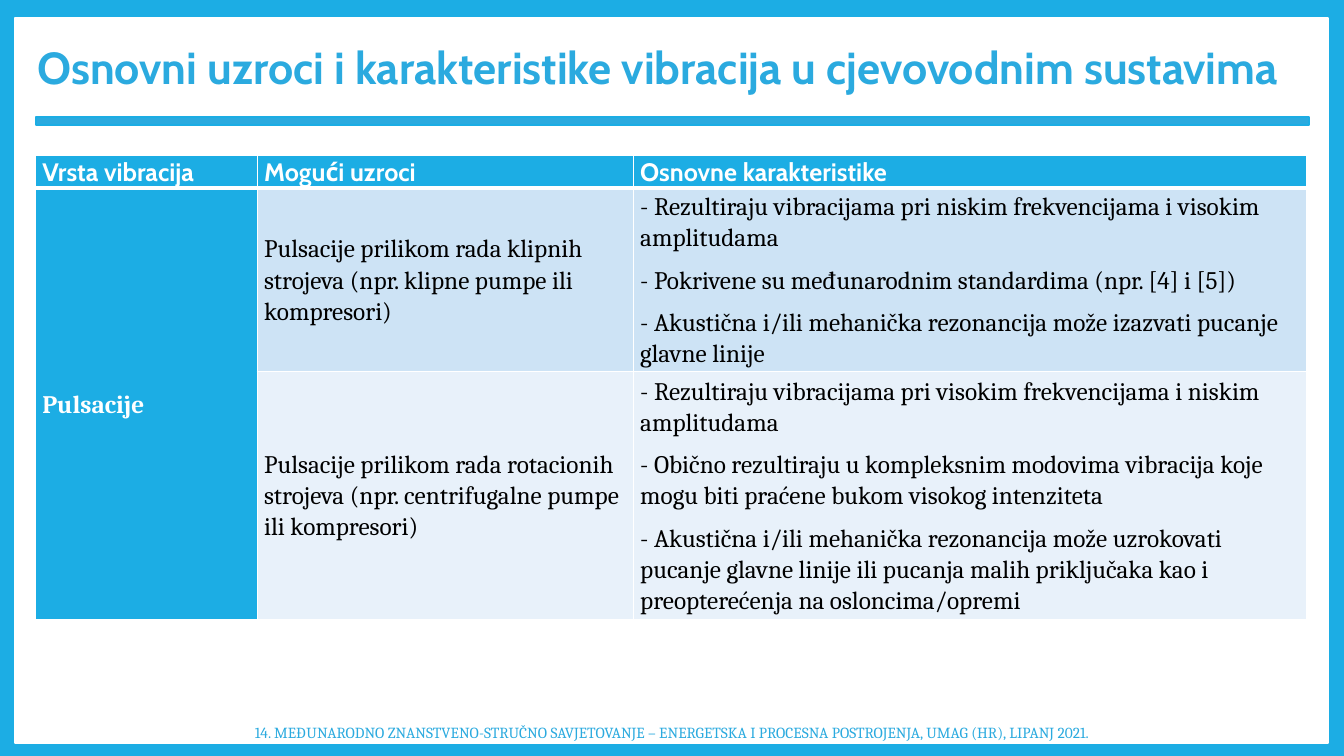
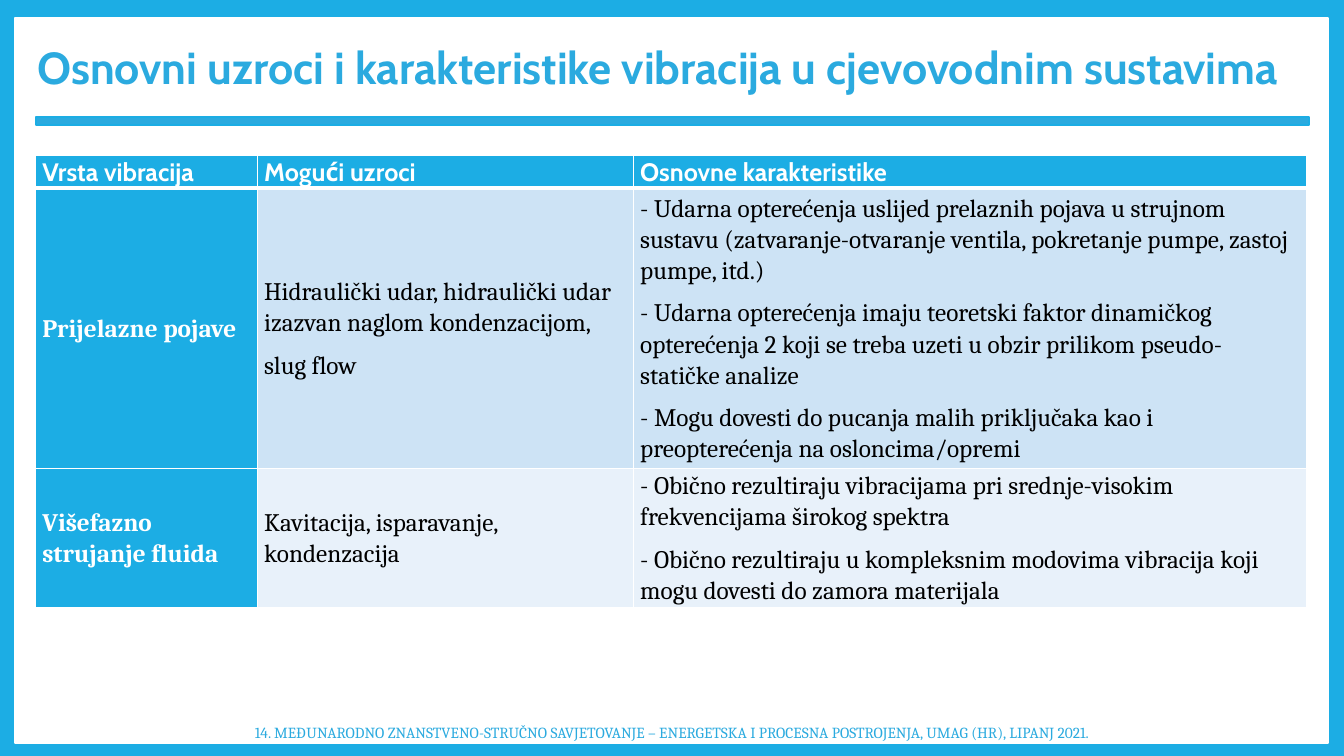
from dataclasses import dataclass

from lxml.etree import SubElement
from pptx import Presentation
from pptx.dml.color import RGBColor
from pptx.enum.shapes import MSO_SHAPE
from pptx.enum.text import MSO_ANCHOR, PP_ALIGN
from pptx.oxml.ns import qn
from pptx.presentation import Presentation as Deck
from pptx.slide import Slide
from pptx.table import _Cell as Cell
from pptx.text.text import TextFrame
from pptx.util import Inches, Pt

HEX = {
    "blue": "1CADE4",
    "accent": "2BAADF",
    "white": "FFFFFF",
    "black": "000000",
    "band": "CDE3F5",
    "pale": "E8F1FA",
}
HEAD_FONT = "Cabin"
BODY_FONT = "Cambria"
TITLE = "Osnovni uzroci i karakteristike vibracija u cjevovodnim sustavima"
FOOTER = (
    "14. MEĐUNARODNO ZNANSTVENO-STRUČNO SAVJETOVANJE – "
    "ENERGETSKA I PROCESNA POSTROJENJA, UMAG (HR), LIPANJ 2021."
)
HEADS = ("Vrsta vibracija", "Mogući uzroci", "Osnovne karakteristike")
COLS = (2.2, 3.73, 6.68)
HEAD_HIGH = 0.32


@dataclass(frozen=True)
class Row:
    kind: str
    cause: tuple[str, ...]
    traits: tuple[str, ...]
    high: float


@dataclass(frozen=True)
class Panel:
    at: tuple[float, float, float, float]
    fill: str
    line: str
    width: float


PANELS = (
    Panel((0.15, 0.18, 13.02, 7.19), "white", "white", 1),
    Panel((0.36, 1.16, 12.62, 0.08), "accent", "blue", 1.5),
)

PAGES = (
    (
        Row(
            "Pulsacije",
            ("Pulsacije prilikom rada klipnih strojeva (npr. klipne pumpe ili kompresori)",),
            (
                "- Rezultiraju vibracijama pri niskim frekvencijama i visokim amplitudama",
                "- Pokrivene su međunarodnim standardima (npr. [4] i [5])",
                "- Akustična i/ili mehanička rezonancija može izazvati pucanje glavne linije",
            ),
            1.82,
        ),
        Row(
            "",
            ("Pulsacije prilikom rada rotacionih strojeva (npr. centrifugalne pumpe ili kompresori)",),
            (
                "- Rezultiraju vibracijama pri visokim frekvencijama i niskim amplitudama",
                "- Obično rezultiraju u kompleksnim modovima vibracija koje mogu biti "
                "praćene bukom visokog intenziteta",
                "- Akustična i/ili mehanička rezonancija može uzrokovati pucanje glavne linije "
                "ili pucanja malih priključaka kao i preopterećenja na osloncima/opremi",
            ),
            2.46,
        ),
    ),
    (
        Row(
            "Prijelazne pojave",
            ("Hidraulički udar, hidraulički udar izazvan naglom kondenzacijom,", "slug flow"),
            (
                "- Udarna opterećenja uslijed prelaznih pojava u strujnom sustavu "
                "(zatvaranje-otvaranje ventila, pokretanje pumpe, zastoj pumpe, itd.)",
                "- Udarna opterećenja imaju teoretski faktor dinamičkog opterećenja 2 "
                "koji se treba uzeti u obzir prilikom pseudo-statičke analize",
                "- Mogu dovesti do pucanja malih priključaka kao i preopterećenja "
                "na osloncima/opremi",
            ),
            2.78,
        ),
        Row(
            "Višefazno strujanje fluida",
            ("Kavitacija, isparavanje, kondenzacija",),
            (
                "- Obično rezultiraju vibracijama pri srednje-visokim frekvencijama širokog spektra",
                "- Obično rezultiraju u kompleksnim modovima vibracija koji mogu dovesti "
                "do zamora materijala",
            ),
            1.38,
        ),
    ),
)


def shade(name: str) -> RGBColor:
    return RGBColor.from_string(HEX[name])


def write(
    frame: TextFrame,
    *lines: str,
    size: float = 18,
    font: str = BODY_FONT,
    color: str = "black",
    bold: bool = False,
    align: PP_ALIGN = PP_ALIGN.LEFT,
    lead: float = 1.0,
    after: float = 0,
) -> None:
    for i, line in enumerate(lines):
        para = frame.add_paragraph() if i else frame.paragraphs[0]
        para.alignment = align
        para.line_spacing = lead
        para.space_after = Pt(after)
        run = para.add_run()
        run.text = line
        run.font.size = Pt(size)
        run.font.name = font
        run.font.bold = bold
        run.font.color.rgb = shade(color)


def border(cell: Cell, row: int) -> None:
    props = cell._tc.get_or_add_tcPr()
    widths = {"lnL": 1, "lnR": 1, "lnT": 3 if row == 1 else 1, "lnB": 3 if row == 0 else 1}
    for i, (side, width) in enumerate(widths.items()):
        line = SubElement(props, qn(f"a:{side}"), w=str(Pt(width)))
        fill = SubElement(line, qn("a:solidFill"))
        SubElement(fill, qn("a:srgbClr"), val=HEX["white"])
        props.insert(i, line)


def fill_cell(cell: Cell, lines: tuple[str, ...], row: int, col: int) -> None:
    head = row == 0 or col == 0
    cell.margin_left = cell.margin_right = Inches(0.07)
    cell.margin_top = cell.margin_bottom = 0
    cell.vertical_anchor = MSO_ANCHOR.MIDDLE
    cell.fill.solid()
    cell.fill.fore_color.rgb = shade("blue" if head else "band" if row % 2 else "pale")
    border(cell, row)
    if any(lines):
        write(
            cell.text_frame,
            *lines,
            font=BODY_FONT if row else HEAD_FONT,
            color="white" if head else "black",
            bold=head,
            lead=1.07,
            after=8,
        )


def add_grid(slide: Slide, rows: tuple[Row, ...]) -> None:
    highs = [HEAD_HIGH, *(row.high for row in rows)]
    table = slide.shapes.add_table(
        len(highs), len(COLS), Inches(0.35), Inches(1.54), Inches(sum(COLS)), Inches(sum(highs))
    ).table
    table.horz_banding = False
    for col, wide in zip(table.columns, COLS):
        col.width = Inches(wide)
    for row, high in zip(table.rows, highs):
        row.height = Inches(high)
    texts = [tuple((head,) for head in HEADS)]
    texts += [((row.kind,), row.cause, row.traits) for row in rows]
    for i, line in enumerate(texts):
        for j, lines in enumerate(line):
            fill_cell(table.cell(i, j), lines, i, j)
    for i, row in enumerate(rows, 1):
        if not row.kind:
            table.cell(i - 1, 0).merge(table.cell(i, 0))


def add_panel(slide: Slide, panel: Panel) -> None:
    shape = slide.shapes.add_shape(MSO_SHAPE.RECTANGLE, *map(Inches, panel.at))
    shape.shadow.inherit = False
    shape.fill.solid()
    shape.fill.fore_color.rgb = shade(panel.fill)
    shape.line.color.rgb = shade(panel.line)
    shape.line.width = Pt(panel.width)


def add_title(slide: Slide) -> None:
    title = slide.shapes.title
    title.left, title.top = Inches(0.27), Inches(0.34)
    title.width, title.height = Inches(12.84), Inches(0.64)
    frame = title.text_frame
    frame.word_wrap = True
    frame.vertical_anchor = MSO_ANCHOR.TOP
    write(frame, TITLE, size=32, font=HEAD_FONT, color="accent", bold=True)
    slide.shapes._spTree.append(title._element)


def add_footer(slide: Slide) -> None:
    box = slide.shapes.add_textbox(Inches(2.18), Inches(7.12), Inches(8.98), Inches(0.29))
    frame = box.text_frame
    frame.word_wrap = False
    frame.vertical_anchor = MSO_ANCHOR.MIDDLE
    write(frame, FOOTER, size=11, color="accent", align=PP_ALIGN.CENTER)


def add_page(deck: Deck, rows: tuple[Row, ...]) -> None:
    slide = deck.slides.add_slide(deck.slide_layouts[5])
    for panel in PANELS:
        add_panel(slide, panel)
    add_footer(slide)
    add_title(slide)
    add_grid(slide, rows)


def main() -> None:
    deck = Presentation()
    deck.slide_width, deck.slide_height = Inches(13.33), Inches(7.5)
    back = deck.slide_master.background.fill
    back.solid()
    back.fore_color.rgb = shade("blue")
    for rows in PAGES:
        add_page(deck, rows)
    deck.save("out.pptx")


if __name__ == "__main__":
    main()
